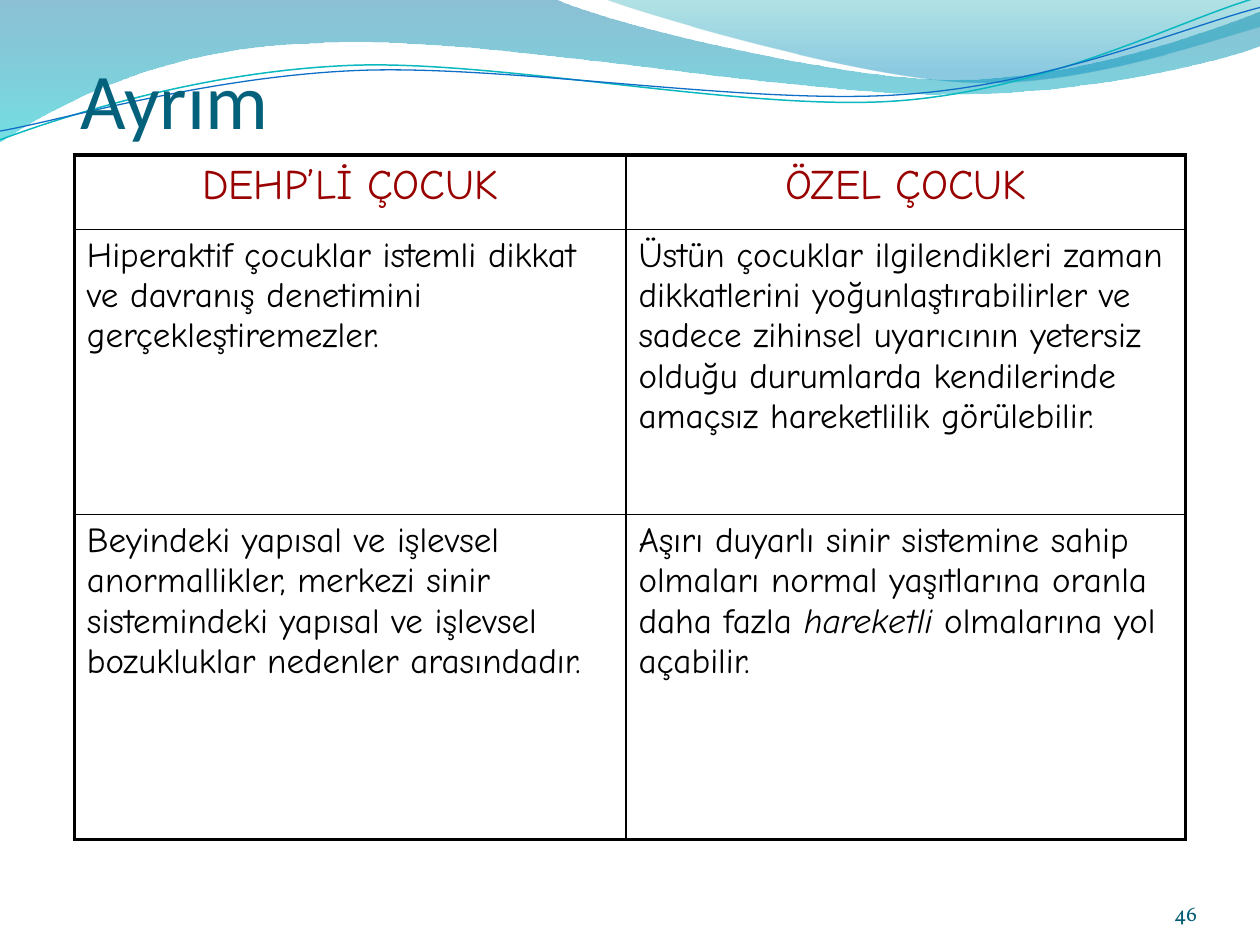
import math

from lxml import etree
from pptx import Presentation
from pptx import util as u
from pptx.dml.color import RGBColor
from pptx.enum import text
from pptx.oxml.ns import qn

Pt = u.Pt
BLACK = "000000"

# Outlines in points: the start, then each part as one point (line)
# or three points (Bézier curve).
BANDS = [
    {"start": (0, 0),
     "parts": [[(316.8, -0.7)],
               [(342.7, 12.2), (478.1, 45.4), (545.8, 45.4)],
               [(614.2, 45.4), (689.8, 18.7), (720, 6.5)],
               [(720.7, 25.9)],
               [(707.8, 31.7), (626.4, 54.7), (537.1, 54)],
               [(447.8, 54), (275, 20.2), (185, 24.5)],
               [(92.9, 25.9), (33.1, 59.8), (-0.7, 81.4)],
               [(0, 0)]],
     "stops": [(0, "0074A1", 45), (1, "00C6CF", 55)]},
    {"start": (344.9, -0.7),
     "parts": [[(366.5, 7.9), (491, 44.6), (553.7, 46.8)],
               [(616.3, 49.7), (691.9, 23), (720, 15.1)],
               [(720, 0)],
               [(344.9, -0.7)]],
     "stops": [(0, "00A1A9", 30), (0.8, "008BBF", 45)]},
]
# Waves are given as they look once tilted about their centre.
TILT = -2.7
WAVES = [
    {"start": (0, 79.9),
     "parts": [[(34.6, 67), (113.8, 41), (199.4, 37.4)],
               [(284.4, 33.8), (427, 64.1), (513.4, 57.6)],
               [(599.8, 51.1), (675.4, 10.8), (718.6, -1.4)]],
     "centre": (359.3, 41.4), "line": ("0AB8BF", 0.85)},
    {"start": (0, 74.9),
     "parts": [[(33.8, 69.1), (118.1, 43.9), (203.8, 40.3)],
               [(290.2, 36.7), (429.8, 60.5), (516.2, 54)],
               [(601.9, 48.2), (677.5, 15.1), (720, 4.3)]],
     "centre": (359.7, 42.5), "line": ("0F6FC6", 0.75)},
]

TITLE = "Ayrım"
PAGE = "46"
# Each cell is a list of runs; every second run is italic.
ROWS = [
    [["DEHP’Lİ ÇOCUK"], ["ÖZEL ÇOCUK"]],
    [["Hiperaktif çocuklar istemli dikkat ve davranış denetimini "
      "gerçekleştiremezler."],
     ["Üstün çocuklar ilgilendikleri zaman dikkatlerini yoğunlaştırabilirler "
      "ve sadece zihinsel uyarıcının yetersiz olduğu durumlarda kendilerinde "
      "amaçsız hareketlilik görülebilir."]],
    [["Beyindeki yapısal ve işlevsel anormallikler, merkezi sinir "
      "sistemindeki yapısal ve işlevsel bozukluklar nedenler arasındadır."],
     ["Aşırı duyarlı sinir sistemine sahip olmaları normal yaşıtlarına oranla "
      "daha fazla ", "hareketli", " olmalarına yol açabilir."]],
]
COL_WIDTHS = [315.2, 319.9]
ROW_HEIGHTS = [42.5, 163, 185.5]


def rgb(value):
    return RGBColor.from_string(value)


def set_font(p, name, size, color):
    p.font.name, p.font.size = name, Pt(size)
    p.font.color.rgb = rgb(color)


def turn(point, centre, degrees):
    """Rotate a point clockwise about a centre."""
    a = math.radians(degrees)
    dx, dy = point[0] - centre[0], point[1] - centre[1]
    return (centre[0] + dx * math.cos(a) - dy * math.sin(a),
            centre[1] + dx * math.sin(a) + dy * math.cos(a))


def add_outline(shapes, start, parts, close):
    """Draw straight segments through all points, then merge triples into curves."""
    points = [(Pt(x), Pt(y)) for x, y in [start] + sum(parts, [])]
    builder = shapes.build_freeform(*points[0])
    builder.add_line_segments(points[1:], close=close)
    sp = builder.convert_to_shape()
    sp.shadow.inherit = False
    lines = iter(list(sp._element.spPr.iter(qn("a:lnTo"))))
    for part in parts:
        segment = [next(lines) for _ in part]
        if len(segment) == 3:
            curve = etree.Element(qn("a:cubicBezTo"))
            segment[0].addprevious(curve)
            for line in segment:
                curve.append(line[0])
                line.getparent().remove(line)
    return sp


def add_band(shapes, band):
    sp = add_outline(shapes, band["start"], band["parts"], True)
    sp.line.fill.background()
    sp.fill.gradient()
    sp.fill.gradient_angle = 270
    for stop, (position, color, _) in zip(sp.fill.gradient_stops, band["stops"]):
        stop.position = position
        stop.color.rgb = rgb(color)
    colors = sp._element.spPr.iter(qn("a:srgbClr"))
    for node, (_, _, opacity) in zip(colors, band["stops"]):
        etree.SubElement(node, qn("a:alpha"), val=str(opacity * 1000))


def add_wave(shapes, wave):
    def level(point):
        return turn(point, wave["centre"], -TILT)

    parts = [[level(point) for point in part] for part in wave["parts"]]
    sp = add_outline(shapes, level(wave["start"]), parts, False)
    sp.rotation = TILT
    color, width = wave["line"]
    sp.fill.background()
    sp.line.color.rgb = rgb(color)
    sp.line.width = Pt(width)


def add_label(shapes, box, words, font, align, insets):
    tf = shapes.add_textbox(*map(Pt, box)).text_frame
    tf.word_wrap = True
    tf.vertical_anchor = text.MSO_ANCHOR.BOTTOM
    tf.margin_left, tf.margin_top, tf.margin_right, tf.margin_bottom = map(Pt, insets)
    p = tf.paragraphs[0]
    p.text, p.alignment = words, align
    set_font(p, *font)


def set_borders(cell, widths):
    tcPr = cell._tc.get_or_add_tcPr()
    for i, (side, width) in enumerate(widths.items()):
        ln = etree.Element(qn(f"a:ln{side}"), w=str(Pt(width)))
        fill = etree.SubElement(ln, qn("a:solidFill"))
        etree.SubElement(fill, qn("a:srgbClr"), val=BLACK)
        tcPr.insert(i, ln)


def add_comparison(shapes):
    frame = shapes.add_table(len(ROWS), len(COL_WIDTHS), Pt(42.5), Pt(88.6),
                             Pt(sum(COL_WIDTHS)), Pt(sum(ROW_HEIGHTS)))
    table = frame.table
    for column, width in zip(table.columns, COL_WIDTHS):
        column.width = Pt(width)
    for row, height in zip(table.rows, ROW_HEIGHTS):
        row.height = Pt(height)
    last_row, last_col = len(ROWS) - 1, len(COL_WIDTHS) - 1
    for i, row in enumerate(ROWS):
        size, color, before = (20, BLACK, 4) if i else (24, "990000", 4.5)
        for j, runs in enumerate(row):
            cell = table.cell(i, j)
            cell.fill.background()
            p = cell.text_frame.paragraphs[0]
            p.alignment = text.PP_ALIGN.LEFT if i else text.PP_ALIGN.CENTER
            p.space_before = Pt(before)
            set_font(p, "Comic Neue", size, color)
            p.font.bold = False
            for k, words in enumerate(runs):
                r = p.add_run()
                r.text = words
                if k % 2:
                    r.font.italic = True
            outer = {"L": j == 0, "R": j == last_col, "T": i == 0, "B": i == last_row}
            set_borders(cell, {side: 2.25 if edge else 1 for side, edge in outer.items()})


def main():
    prs = Presentation()
    prs.slide_width, prs.slide_height = Pt(720), Pt(540)
    shapes = prs.slides.add_slide(prs.slide_layouts[6]).shapes
    for band in BANDS:
        add_band(shapes, band)
    waves = shapes.add_group_shape()
    for wave in WAVES:
        add_wave(waves.shapes, wave)
    add_label(shapes, (25.2, 21.6, 668.9, 61.2), TITLE, ("Calibri", 45, "04617B"),
              text.PP_ALIGN.LEFT, (20.6, 3.6, 0, 0))
    add_comparison(shapes)
    add_label(shapes, (624.2, 500.4, 59.8, 28.8), PAGE, ("Vollkorn", 12, "045D75"),
              text.PP_ALIGN.RIGHT, (0, 0, 0, 0))
    prs.save("out.pptx")


if __name__ == "__main__":
    main()
